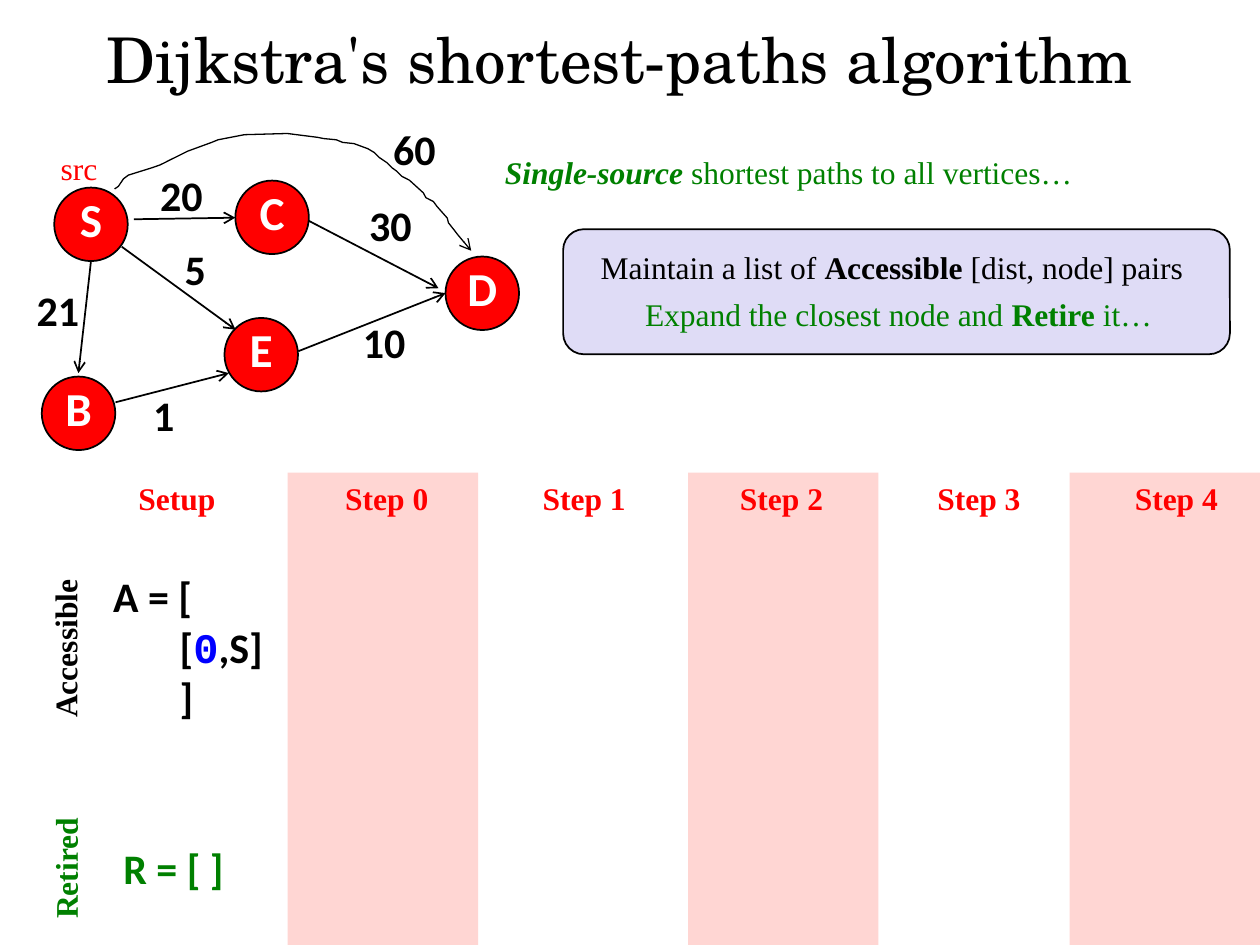
"""Build the slide that introduces Dijkstra's shortest-paths algorithm."""
from dataclasses import dataclass

from lxml import etree
from pptx import Presentation
from pptx.dml.color import RGBColor
from pptx.enum import shapes, text
from pptx.oxml import ns
from pptx.util import Pt

BLACK = RGBColor(0, 0, 0)
WHITE = RGBColor(255, 255, 255)
RED = RGBColor(255, 0, 0)
GREEN = RGBColor(0, 128, 0)
BLUE = RGBColor(0, 0, 255)
PINK = RGBColor(0xFF, 0xD6, 0xD3)
LAVENDER = RGBColor(0xDF, 0xDC, 0xF6)

SERIF = "Times New Roman"
SANS = "Calibri"
CENTER = text.PP_ALIGN.CENTER
LEFT = text.PP_ALIGN.LEFT


@dataclass(frozen=True)
class Span:
    words: str
    bold: bool | None = None
    italic: bool | None = None
    face: str | None = None
    color: RGBColor | None = None


@dataclass(frozen=True)
class Line:
    spans: tuple[Span, ...]
    indent: float = 0


@dataclass(frozen=True)
class Label:
    left: float
    top: float
    width: float
    height: float
    lines: tuple[Line, ...]
    size: float = 18
    face: str = SERIF
    color: RGBColor = BLACK
    bold: bool = False
    align: text.PP_ALIGN = CENTER
    wrap: bool = True
    rotation: float = 0


@dataclass(frozen=True)
class Node:
    name: str
    left: float
    top: float


@dataclass(frozen=True)
class Edge:
    start: tuple[float, float]
    end: tuple[float, float]


@dataclass(frozen=True)
class Weight:
    value: str
    left: float
    top: float


def plain(words: str) -> tuple[Line, ...]:
    """Return a single line of uniform text."""
    return (Line((Span(words),)),)


NODE_SIZE = 42
NODES = (Node("S", 31, 107.2), Node("B", 23.9, 215.2), Node("E", 128.3, 181.7),
         Node("C", 134.5, 103.2), Node("D", 254.6, 146.6))
EDGES = (
    Edge((76.5, 125.3), (134.5, 124.4)),
    Edge((176.5, 126.2), (250.6, 164.7)),
    Edge((170.5, 200.7), (254.6, 167.5)),
    Edge((66, 229.9), (130.8, 213.2)),
    Edge((52, 149.2), (44.8, 213.2)),
    Edge((69.6, 141), (134.6, 188.4)),
)
WEIGHTS = (Weight("20", 76.3, 93.6), Weight("30", 195.8, 110.2), Weight("5", 84.2, 135.4),
           Weight("10", 192.2, 177.1), Weight("21", 5.8, 159.1), Weight("1", 66.2, 218.9),
           Weight("60", 209.5, 67))
DIRECT_ROUTE = (
    (269.3, 143.3), (261.4, 133.9), (259.2, 131), (256.3, 127.4), (255.6, 124.6),
    (249.8, 118.1), (247.7, 115.2), (243.4, 113), (241.9, 110.2), (234, 103),
    (229.7, 100.8), (226.8, 97.9), (223.9, 95.8), (221, 92.9), (216.7, 90),
    (213.8, 87.1), (210.2, 85), (202.3, 82.1), (195.8, 81.4), (192.2, 79.9),
    (185, 79.2), (181.4, 78.5), (164.2, 76.3), (139.7, 77), (124.6, 79.9),
    (121, 81.4), (115.2, 83.5), (107.3, 86.4), (100.1, 90), (97.2, 91.4),
    (94.3, 92.9), (91.4, 94.3), (87.1, 95.8), (73.4, 100.1), (70.6, 102.2),
    (67.7, 106.5), (65.5, 108),
)
BAND_LEFTS = (164.4, 393.2, 611.2)
BAND_TOP, BAND_WIDTH, BAND_HEIGHT = 270, 108.8, 270
STEP_LEFT, STEP_PITCH, STEP_COUNT = 190.2, 112.8, 5

LABELS = (
    Label(15.1, 7.9, 688.3, 51.1, plain("Dijkstra's shortest-paths algorithm "),
          36, "TeX Gyre Schola"),
    Label(270.7, 84.2, 360, 28.8,
          (Line((Span("Single-source ", True, True),
                 Span("shortest paths to all vertices…"))),), color=GREEN),
    Label(331.9, 138.2, 360, 28.8,
          (Line((Span("Maintain a list of "), Span("Accessible", True),
                 Span(" [dist, node] pairs "))),)),
    Label(333.4, 164.9, 360, 28.8,
          (Line((Span("Expand the closest node and "), Span("Retire", True),
                 Span(" it…"))),), color=GREEN),
    Label(5.8, 81.4, 56.9, 28.8, plain("src"), color=RED, align=text.PP_ALIGN.RIGHT),
    Label(-10.1, 355.7, 94.3, 28.8, plain("Accessible"), bold=True, align=LEFT,
          wrap=False, rotation=270),
    Label(0.7, 481, 73.4, 28.8, plain("Retired"), color=GREEN, bold=True, align=LEFT,
          wrap=False, rotation=270),
    Label(57.6, 322.6, 108, 94.3,
          (Line((Span("A = ["),)),
           Line((Span("["), Span("0", face="Courier New", color=BLUE), Span(",S]")), 38),
           Line((Span("]"),), 38)), 24, SANS, bold=True, align=LEFT),
    Label(63.4, 478.1, 72.7, 36, plain("R = [ ]"), 24, SANS, GREEN, True, LEFT, False),
    Label(72, BAND_TOP, 59, 28.8, plain("Setup"), color=RED, bold=True, align=LEFT,
          wrap=False),
)


def add_block(parent, kind, left: float, top: float, width: float, height: float,
              fill: RGBColor, outlined: bool) -> None:
    """Add a filled preset shape, with a thin black outline on request."""
    block = parent.add_shape(kind, Pt(left), Pt(top), Pt(width), Pt(height))
    block.shadow.inherit = False
    block.fill.solid()
    block.fill.fore_color.rgb = fill
    if outlined:
        block.line.color.rgb = BLACK
        block.line.width = Pt(1)
    else:
        block.line.fill.background()


def add_label(parent, label: Label) -> None:
    """Add a text box that holds the lines of a label."""
    box = parent.add_textbox(Pt(label.left), Pt(label.top), Pt(label.width), Pt(label.height))
    box.rotation = label.rotation
    frame = box.text_frame
    frame.word_wrap = label.wrap
    frame.auto_size = text.MSO_AUTO_SIZE.SHAPE_TO_FIT_TEXT
    for index, line in enumerate(label.lines):
        paragraph = frame.add_paragraph() if index else frame.paragraphs[0]
        paragraph.alignment = label.align
        font = paragraph.font
        font.size, font.name, font.bold = Pt(label.size), label.face, label.bold
        font.color.rgb = label.color
        if line.indent:
            paragraph._p.get_or_add_pPr().set("marL", str(Pt(line.indent)))
        for span in line.spans:
            run = paragraph.add_run()
            run.text = span.words
            run.font.bold, run.font.italic, run.font.name = span.bold, span.italic, span.face
            if span.color is not None:
                run.font.color.rgb = span.color


def style_arrow(arrow, width: float, end: str) -> None:
    """Draw an open arrowhead on a black line."""
    arrow.line.color.rgb = BLACK
    arrow.line.width = Pt(width)
    etree.SubElement(arrow.line._get_or_add_ln(), ns.qn(f"a:{end}"), type="arrow")


def add_node(parent, node: Node) -> None:
    """Add a grouped circle and its letter."""
    group = parent.add_group_shape().shapes
    add_block(group, shapes.MSO_SHAPE.OVAL, node.left, node.top, NODE_SIZE, NODE_SIZE, RED, True)
    add_label(group, Label(node.left - 4, node.top - 2, 50, 40.3, plain(node.name),
                           27, SANS, WHITE, True))


def add_edge(parent, edge: Edge) -> None:
    """Add a straight arrow between two nodes."""
    arrow = parent.add_connector(shapes.MSO_CONNECTOR.STRAIGHT,
                                 *map(Pt, edge.start + edge.end))
    style_arrow(arrow, 1, "tailEnd")
    etree.SubElement(arrow._element.spPr, ns.qn("a:effectLst"))


def add_route(parent, points: tuple[tuple[float, float], ...]) -> None:
    """Add the long open route with an arrowhead at its first point."""
    first, *rest = [(Pt(x), Pt(y)) for x, y in points]
    builder = parent.build_freeform(*first)
    builder.add_line_segments(rest, close=False)
    route = builder.convert_to_shape()
    route.shadow.inherit = False
    route.fill.background()
    style_arrow(route, 0.75, "headEnd")


def main() -> None:
    """Compose the slide and save it."""
    deck = Presentation()
    deck.slide_width, deck.slide_height = Pt(720), Pt(540)
    canvas = deck.slides.add_slide(deck.slide_layouts[6]).shapes
    for left in BAND_LEFTS:
        add_block(canvas, shapes.MSO_SHAPE.RECTANGLE, left, BAND_TOP, BAND_WIDTH,
                  BAND_HEIGHT, PINK, False)
    add_block(canvas, shapes.MSO_SHAPE.ROUNDED_RECTANGLE, 321.8, 131, 381, 71.5, LAVENDER, True)
    for node in NODES:
        add_node(canvas, node)
    for edge in EDGES:
        add_edge(canvas, edge)
    add_route(canvas, DIRECT_ROUTE)
    for weight in WEIGHTS:
        add_label(canvas, Label(weight.left, weight.top, 54.7, 36, plain(weight.value),
                                24, SANS, bold=True))
    for label in LABELS:
        add_label(canvas, label)
    for step in range(STEP_COUNT):
        add_label(canvas, Label(STEP_LEFT + step * STEP_PITCH, BAND_TOP, 62.6, 28.8,
                                plain(f"Step {step}"), color=RED, bold=True, align=LEFT,
                                wrap=False))
    deck.save("out.pptx")


if __name__ == "__main__":
    main()
